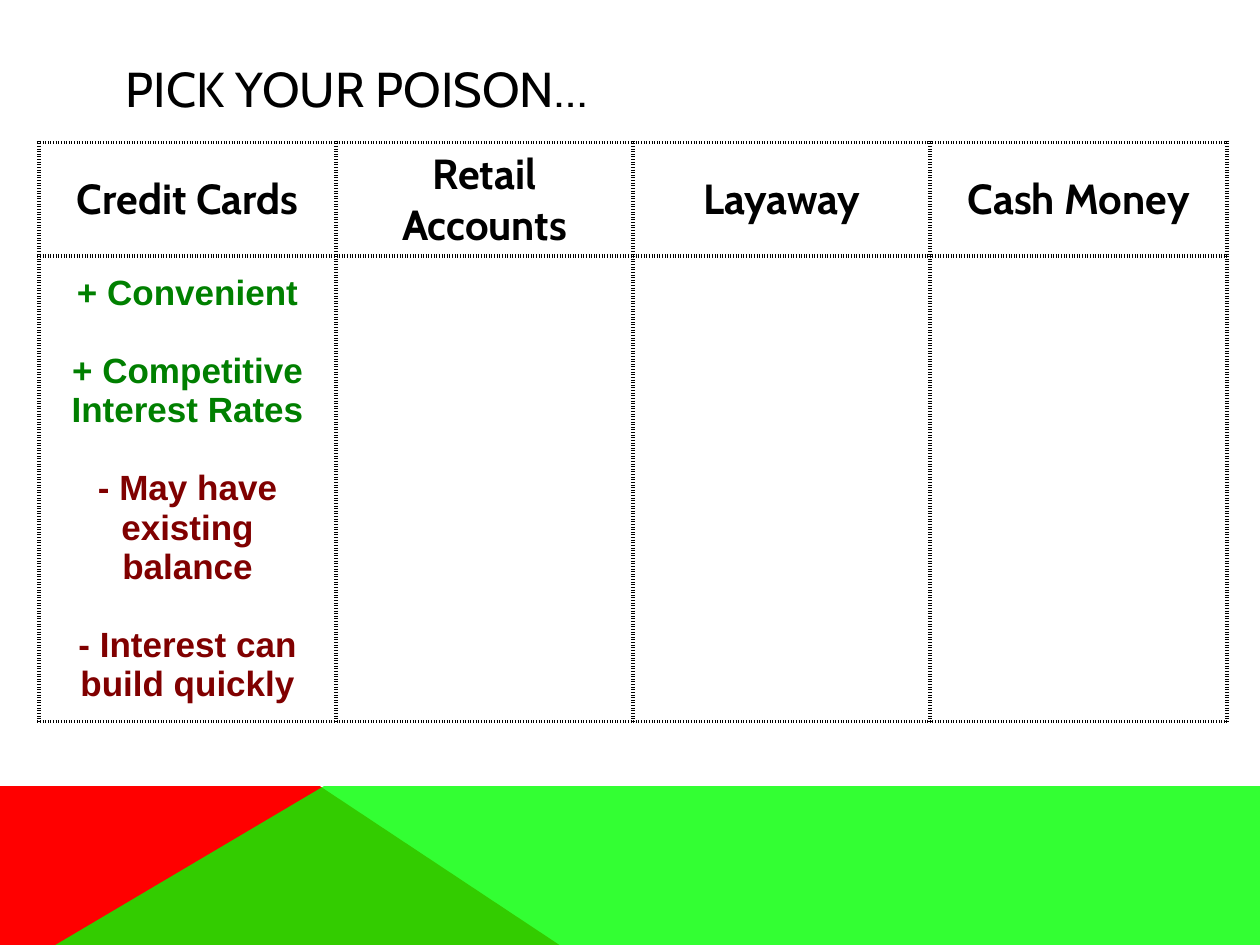
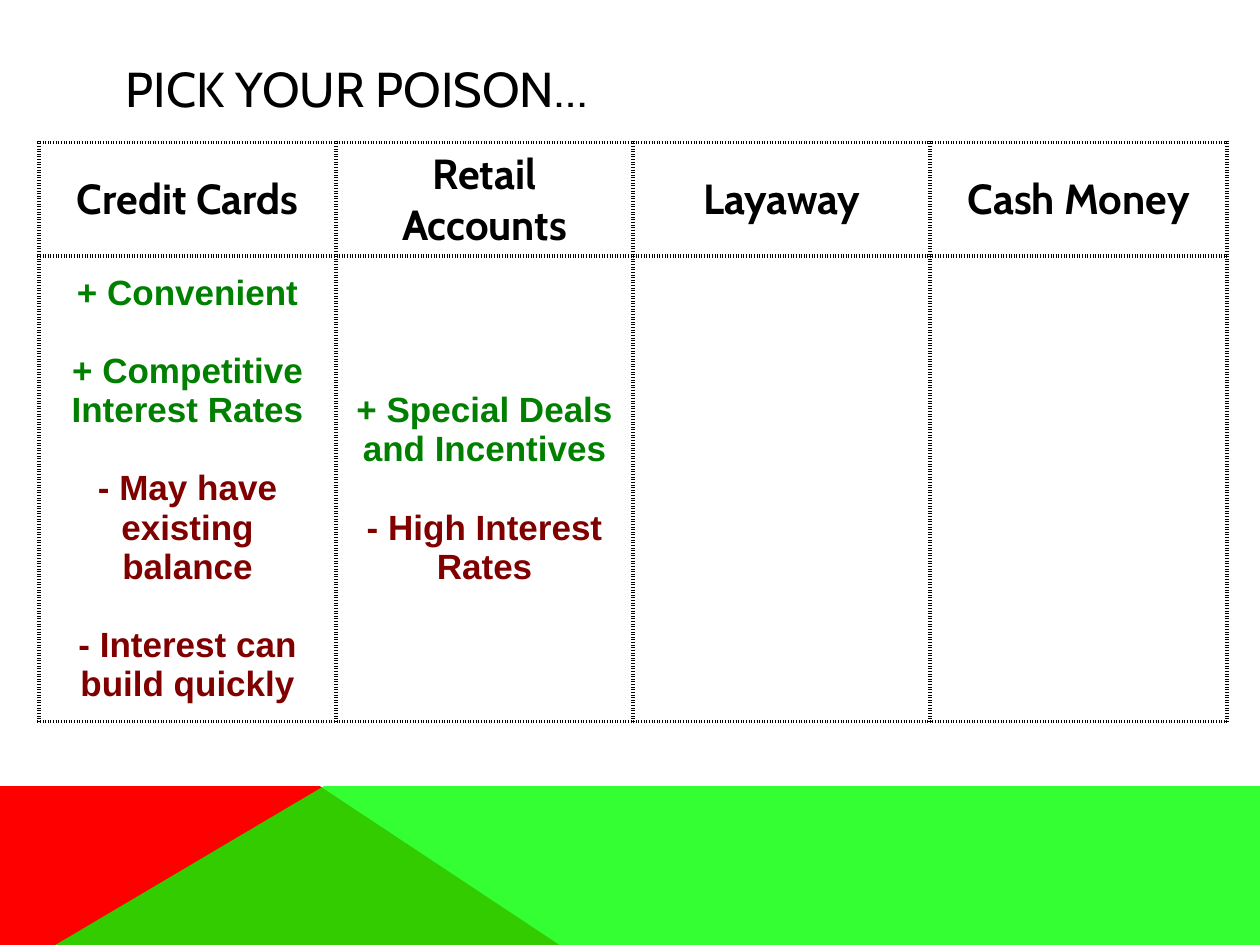
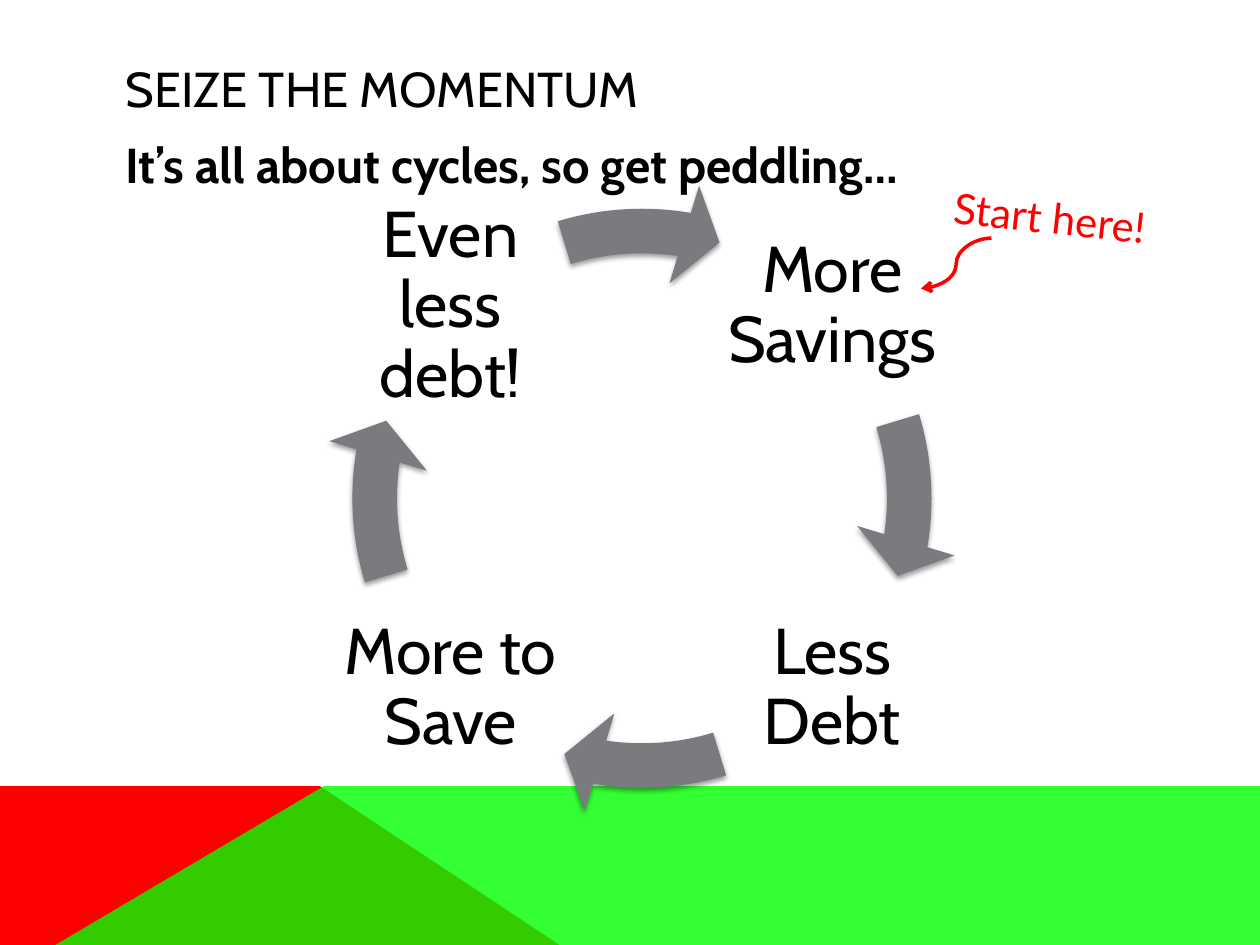
from lxml.etree import SubElement
from pptx import Presentation
from pptx.dml.color import RGBColor
from pptx.enum.shapes import MSO_CONNECTOR as Connector, MSO_SHAPE as Preset
from pptx.enum.text import MSO_ANCHOR as Anchor, MSO_AUTO_SIZE as AutoSize, PP_ALIGN as Align
from pptx.oxml.ns import qn
from pptx.util import Inches, Pt

BLACK = RGBColor(0x00, 0x00, 0x00)
RED = RGBColor(0xFF, 0x00, 0x00)
LIME = RGBColor(0x00, 0xFF, 0x00)
GRAY = RGBColor(0x79, 0x7B, 0x7E)
GREEN = RGBColor(0x00, 0x80, 0x00)
DEEP_GREEN = RGBColor(0x00, 0x7F, 0x00)
MAROON = RGBColor(0x80, 0x00, 0x00)

BAND_TOP = 6.24
RED_BAND = [(0, 7.5), (0, BAND_TOP), (2.54, BAND_TOP), (4.44, 7.5)]
LIME_BAND = [(0.44, 7.5), (2.57, BAND_TOP), (10, BAND_TOP), (10, 7.5)]

OPTIONS = ["Credit Cards", "Retail Accounts", "Layaway", "Cash Money"]
CREDIT_POINTS = [
    ("+ Convenient", GREEN, 0),
    ("+ Competitive", DEEP_GREEN, 22.3),
    ("Interest Rates", DEEP_GREEN, 0),
    ("- May have existing balance", MAROON, 22.3),
    ("- Interest can build quickly", MAROON, 22.3),
]
RETAIL_POINTS = [
    ("+ Special Deals and Incentives", DEEP_GREEN, 0),
    ("- High Interest Rates", MAROON, 22.3),
]

CYCLE_LEFT, CYCLE_RIGHT = 2.68, 5.71
CYCLE_TOP, CYCLE_BOTTOM = 1.54, 4.57
CYCLE_STEPS = [
    ("More Savings", CYCLE_RIGHT, CYCLE_TOP),
    ("Less Debt", CYCLE_RIGHT, CYCLE_BOTTOM),
    ("More to Save", CYCLE_LEFT, CYCLE_BOTTOM),
    ("Even less debt!", CYCLE_LEFT, CYCLE_TOP),
]


class Builder:
    """Holds the deck style and draws elements on the current page."""

    font = "Cabin"
    title_size = 28

    def __init__(self):
        self.deck = Presentation()
        self.deck.slide_width, self.deck.slide_height = Inches(10), Inches(7.5)
        self.page = None

    def start(self, title):
        self.page = self.deck.slides.add_slide(self.deck.slide_layouts[6])
        self.band(RED_BAND, RED)
        self.band(LIME_BAND, LIME, opacity=80)
        self.text(title, 0.9, 0.4, 8.22, 0.6, self.title_size, anchor=Anchor.MIDDLE)

    def paint(self, shape, color):
        shape.fill.solid()
        shape.fill.fore_color.rgb = color
        shape.line.fill.background()
        shape.shadow.inherit = False

    def band(self, points, color, opacity=100):
        corners = [(Inches(x), Inches(y)) for x, y in points]
        outline = self.page.shapes.build_freeform(*corners[0])
        outline.add_line_segments(corners[1:], close=True)
        shape = outline.convert_to_shape()
        self.paint(shape, color)
        if opacity < 100:
            tint = shape.element.spPr.find(".//" + qn("a:srgbClr"))
            SubElement(tint, qn("a:alpha"), val=str(opacity * 1000))

    def span(self, para, text, size, color=BLACK, bold=False, font=None):
        span = para.add_run()
        span.text = text
        span.font.name = font or self.font
        span.font.size = Pt(size)
        span.font.bold = bold
        span.font.color.rgb = color

    def text(self, text, left, top, width, height, size, anchor=Anchor.TOP, **style):
        box = self.page.shapes.add_textbox(
            Inches(left), Inches(top), Inches(width), Inches(height))
        box.text_frame.word_wrap = True
        box.text_frame.vertical_anchor = anchor
        self.span(box.text_frame.paragraphs[0], text, size, **style)
        return box

    def cell(self, cell, points, size, font=None):
        cell.vertical_anchor = Anchor.MIDDLE
        properties = cell._tc.get_or_add_tcPr()
        for side in ("a:lnL", "a:lnR", "a:lnT", "a:lnB"):
            border = SubElement(properties, qn(side), w=str(Pt(2.25)))
            ink = SubElement(border, qn("a:solidFill"))
            SubElement(ink, qn("a:srgbClr"), val=str(BLACK))
            SubElement(border, qn("a:prstDash"), val="dot")
        cell.fill.background()
        for index, (text, color, gap) in enumerate(points):
            frame = cell.text_frame
            para = frame.add_paragraph() if index else frame.paragraphs[0]
            para.alignment = Align.CENTER
            if gap:
                para.space_before = Pt(gap)
            self.span(para, text, size, color, True, font)

    def table(self, columns):
        table = self.page.shapes.add_table(
            2, len(OPTIONS), Inches(0.31), Inches(1.13), Inches(9.43), Inches(4.47)).table
        table.first_row = table.horz_banding = False
        table.rows[0].height, table.rows[1].height = Inches(0.8), Inches(3.67)
        for index, option in enumerate(OPTIONS):
            points = columns[index] if index < len(columns) else []
            self.cell(table.cell(0, index), [(option, BLACK, 0)], 24)
            self.cell(table.cell(1, index), points, 20, font="Arial")

    def step(self, text, left, top):
        box = self.text(text, left, top, 1.79, 1.79, 37, Anchor.MIDDLE)
        frame = box.text_frame
        frame.margin_left = frame.margin_right = Inches(0.05)
        frame.margin_top = frame.margin_bottom = Inches(0.05)
        frame.paragraphs[0].alignment = Align.CENTER
        frame.paragraphs[0].line_spacing = 0.9

    def cycle_arrow(self, turn):
        arrow = self.page.shapes.add_shape(
            Preset.CIRCULAR_ARROW, Inches(2.57), Inches(1.43), Inches(5.05), Inches(5.05))
        angles = [7.76, 9.12 + turn, (343.11 + turn) % 360]
        values = [0.07, *(angle * 0.6 for angle in angles), 0.08]
        for index, value in enumerate(values):
            arrow.adjustments[index] = value
        self.paint(arrow, GRAY)
        effects = arrow.element.spPr.find(qn("a:effectLst"))
        shadow = SubElement(effects, qn("a:outerShdw"), blurRad=str(Pt(3.1)),
                            dist=str(Pt(1.6)), dir="5400000", rotWithShape="0")
        shade = SubElement(shadow, qn("a:srgbClr"), val=str(BLACK))
        SubElement(shade, qn("a:alpha"), val="38000")

    def curved_arrow(self, left, top, right, bottom):
        arrow = self.page.shapes.add_connector(
            Connector.CURVE, Inches(left), Inches(top), Inches(right), Inches(bottom))
        arrow.line.color.rgb = RED
        arrow.line.width = Pt(2)
        properties = arrow.element.spPr
        SubElement(properties.find(qn("a:ln")), qn("a:tailEnd"), type="arrow")
        SubElement(properties, qn("a:effectLst"))


def main():
    builder = Builder()
    for columns in ([CREDIT_POINTS], [CREDIT_POINTS, RETAIL_POINTS]):
        builder.start("PICK YOUR POISON…")
        builder.table(columns)

    builder.start("SEIZE THE MOMENTUM")
    subtitle = builder.text("It’s all about cycles, so get peddling…",
                            0.9, 1.02, 8.22, 1.25, builder.title_size, bold=True)
    subtitle.text_frame.paragraphs[0].space_before = Pt(8)
    for index, (text, left, top) in enumerate(CYCLE_STEPS):
        builder.step(text, left, top)
        builder.cycle_arrow(90 * index)
    builder.curved_arrow(7.87, 1.89, 7.31, 2.29)
    hint = builder.text("Start here!", 7.47, 1.49, 2.04, 0.5, 24, color=RED, font="Lato")
    hint.text_frame.auto_size = AutoSize.SHAPE_TO_FIT_TEXT
    hint.rotation = 6.3
    builder.deck.save("out.pptx")


if __name__ == "__main__":
    main()
